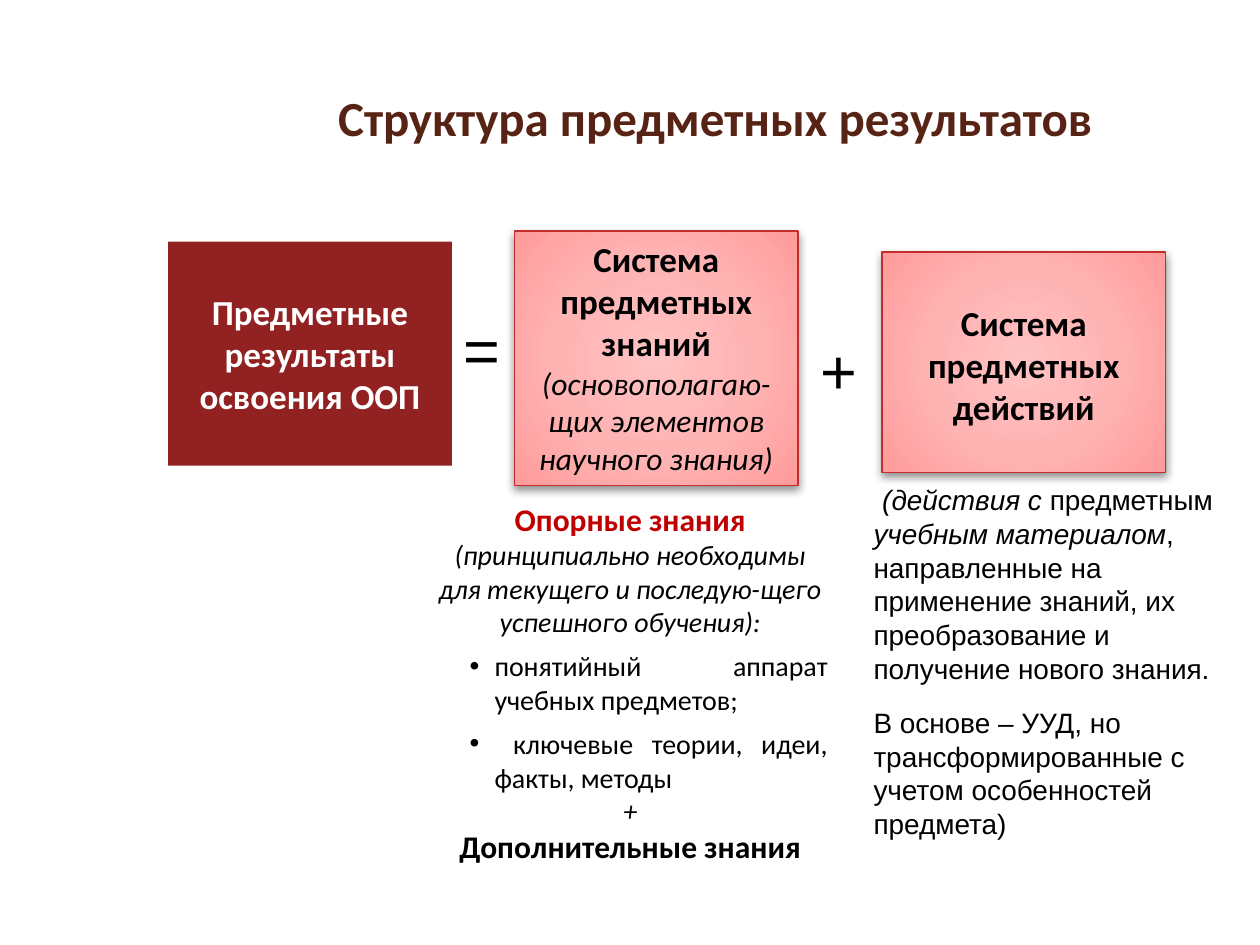
from pptx import Presentation
from pptx.dml.color import RGBColor
from pptx.enum.shapes import MSO_SHAPE
from pptx.enum.text import MSO_ANCHOR, PP_ALIGN
from pptx.oxml import parse_xml
from pptx.oxml.ns import nsdecls, qn
from pptx.util import Cm, Pt

CENTER, LEFT, JUSTIFY = PP_ALIGN.CENTER, PP_ALIGN.LEFT, PP_ALIGN.JUSTIFY
STOPS = [(0, "FFC2C2"), (50, "FFB4B4"), (97, "FF9C9C"), (100, "FF9595")]


def rgb(value):
    return RGBColor.from_string(value)


class Deck:
    """Holds the style and the current slide and draws each kind of element."""

    dark, border, accent = "922222", "C32D2E", "C00000"
    title, black, white = "572314", "000000", "FFFFFF"

    def __init__(self):
        self.prs = Presentation()
        self.prs.slide_width, self.prs.slide_height = Cm(25.4), Cm(19.05)
        self.s = self.prs.slides.add_slide(self.prs.slide_layouts[6])

    def paragraph(self, tf, runs, align=CENTER, font="Calibri", color=black,
                  before=0, bullet=False):
        p = tf.paragraphs[0] if not tf.paragraphs[0].runs else tf.add_paragraph()
        p.alignment, p.space_before = align, Pt(before)
        for text, size, style in runs:
            r = p.add_run()
            r.text = text
            r.font.name, r.font.size = font, Pt(size)
            r.font.bold, r.font.italic = "b" in style, "i" in style
            r.font.color.rgb = rgb(color)
        if bullet:
            pPr = p._p.get_or_add_pPr()
            pPr.set("marL", str(Cm(1.25)))
            pPr.set("indent", str(Cm(-0.5)))
            pPr.append(parse_xml(f'<a:buFont {nsdecls("a")} typeface="Arial"/>'))
            pPr.append(parse_xml(f'<a:buChar {nsdecls("a")} char="•"/>'))

    def text(self, x, y, w, h, anchor=MSO_ANCHOR.TOP):
        tf = self.s.shapes.add_textbox(Cm(x), Cm(y), Cm(w), Cm(h)).text_frame
        tf.word_wrap, tf.vertical_anchor = True, anchor
        return tf

    def sign(self, x, y, symbol):
        self.paragraph(self.text(x, y, 1.7, 1.8), [(symbol, 36, "")], LEFT, "Arial")

    def box(self, x, y, h, runs, color, inset=0.99):
        sp = self.s.shapes.add_shape(MSO_SHAPE.RECTANGLE, Cm(x), Cm(y), Cm(5.72), Cm(h))
        sp.shadow.inherit = False
        tf = sp.text_frame
        tf.word_wrap, tf.vertical_anchor, tf.margin_top = True, MSO_ANCHOR.TOP, Cm(inset)
        self.paragraph(tf, runs, color=color)
        return sp

    def solid_box(self, *args):
        sp = self.box(*args, self.white)
        sp.fill.solid()
        sp.fill.fore_color.rgb = rgb(self.dark)
        sp.line.fill.background()

    def glow_box(self, *args, **kwargs):
        sp = self.box(*args, self.black, **kwargs)
        sp.line.color.rgb, sp.line.width = rgb(self.border), Pt(0.75)
        spPr = sp._element.spPr
        stops = "".join(f'<a:gs pos="{pos * 1000}"><a:srgbClr val="{color}"/></a:gs>'
                        for pos, color in STOPS)
        spPr.find(qn("a:prstGeom")).addnext(parse_xml(
            f'<a:gradFill {nsdecls("a")} rotWithShape="1"><a:gsLst>{stops}</a:gsLst>'
            '<a:path path="circle"><a:fillToRect l="50000" t="50000" r="50000" '
            'b="50000"/></a:path></a:gradFill>'))
        spPr.find(qn("a:effectLst")).append(parse_xml(
            f'<a:outerShdw {nsdecls("a")} blurRad="{Pt(5)}" dist="{Pt(2)}" '
            'dir="5400000" rotWithShape="0"><a:srgbClr val="000000">'
            '<a:alpha val="43000"/></a:srgbClr></a:outerShdw>'))


def main():
    d = Deck()
    d.solid_box(3.39, 4.87, 4.52, [("Предметные результаты освоения ООП", 20, "b")])
    d.sign(9.1, 6.14, "=")
    d.glow_box(10.37, 4.66, 5.13, [
        ("Система предметных знаний ", 20, "b"),
        ("(основополагаю-щих элементов научного знания)", 18, "i")], inset=0.13)
    d.glow_box(17.78, 5.08, 4.45, [("Система предметных действий", 20, "b")])
    d.sign(16.3, 6.56, "+")

    tf = d.text(8.47, 9.95, 8.47, 7.7)
    d.paragraph(tf, [("Опорные знания", 18, "b")], color=d.accent)
    d.paragraph(tf, [("(принципиально необходимы для текущего и последую-щего "
                      "успешного обучения):", 16, "i")])
    for item in ("понятийный аппарат учебных предметов;",
                 " ключевые теории, идеи, факты, методы"):
        d.paragraph(tf, [(item, 16, "")], JUSTIFY, before=6, bullet=True)
    d.paragraph(tf, [("+", 16, "i")])
    d.paragraph(tf, [("Дополнительные знания", 18, "b")])

    tf = d.text(17.36, 9.53, 7.42, 7.6)
    d.paragraph(tf, [
        (" ", 18, "i"), ("(действия с", 16, "i"), (" предметным ", 16, ""),
        ("учебным материалом", 16, "i"),
        (", направленные на применение знаний, их преобразование и "
         "получение нового знания.", 16, "")], LEFT, "Arial")
    d.paragraph(tf, [("В основе – УУД, но трансформированные с учетом особенностей "
                      "предмета)", 16, "")], LEFT, "Arial", before=12)

    tf = d.text(4, 0.76, 20.83, 3.18, MSO_ANCHOR.MIDDLE)
    d.paragraph(tf, [("Структура предметных результатов", 28, "b")], color=d.title)
    d.prs.save("out.pptx")


if __name__ == "__main__":
    main()
